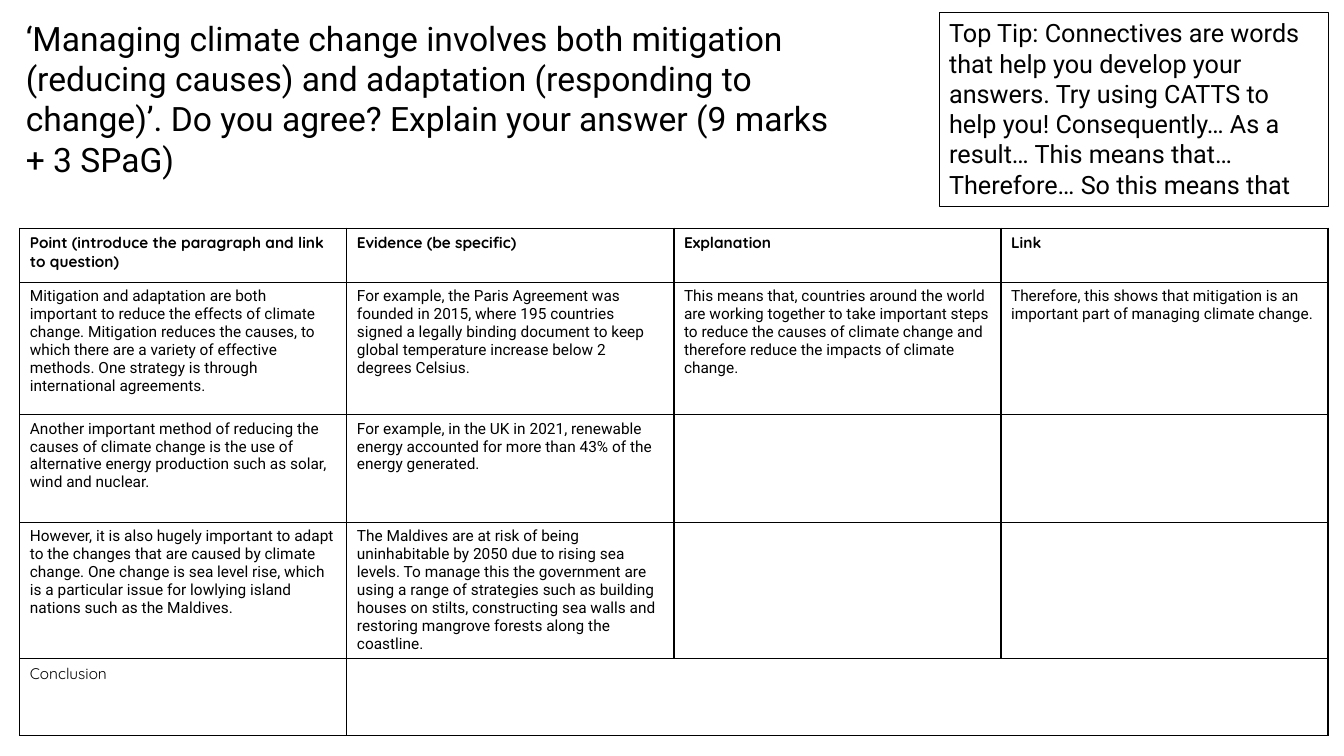
from lxml.etree import SubElement as Sub
from pptx import Presentation
from pptx.dml.color import RGBColor as RGB
from pptx.enum.shapes import MSO_SHAPE as Form
from pptx.enum.text import MSO_ANCHOR as Anchor, PP_ALIGN as Align
from pptx.oxml.ns import qn
from pptx.util import Cm, Pt

HUES = {"ink": "000000", "paper": "FFFFFF"}
HEAD, BODY = "Quicksand", "Roboto"
TITLE = ("‘Managing climate change involves both mitigation (reducing causes) and "
         "adaptation (responding to change)’. Do you agree? Explain your answer "
         "(9 marks + 3 SPaG)")
TIP = ("Top Tip: Connectives are words that help you develop your answers. Try using "
       "CATTS to help you! Consequently… As a result… This means that… Therefore… "
       "So this means that")
ROWS = [
    (1.37, ["Point (introduce the paragraph and link to question)",
            "Evidence (be specific)", "Explanation", "Link"]),
    (3.33, ["Mitigation and adaptation are both important to reduce the effects of "
            "climate change. Mitigation reduces the causes, to which there are a "
            "variety of effective methods. One strategy is through international "
            "agreements.",
            "For example, the Paris Agreement was founded in 2015, where 195 countries "
            "signed a legally binding document to keep global temperature increase "
            "below 2 degrees Celsius.",
            "This means that, countries around the world are working together to take "
            "important steps to reduce the causes of climate change and therefore "
            "reduce the impacts of climate change.",
            "Therefore, this shows that mitigation is an important part of managing "
            "climate change."]),
    (2.72, ["Another important method of reducing the causes of climate change is the "
            "use of alternative energy production such as solar, wind and nuclear.",
            "For example, in the UK in 2021, renewable energy accounted for more than "
            "43% of the energy generated.", "", ""]),
    (3.33, ["However, it is also hugely important to adapt to the changes that are "
            "caused by climate change. One change is sea level rise, which is a "
            "particular issue for lowlying island nations such as the Maldives.",
            "The Maldives are at risk of being uninhabitable by 2050 due to rising sea "
            "levels. To manage this the government are using a range of strategies "
            "such as building houses on stilts, constructing sea walls and restoring "
            "mangrove forests along the coastline.", "", ""]),
    (1.93, ["Conclusion", "", "", ""]),
]


def hue(name):
    return RGB.from_string(HUES[name])


def write(frame, text, size=11, font=BODY, bold=False):
    frame.word_wrap = True
    frame.vertical_anchor = Anchor.TOP
    para = frame.paragraphs[0]
    para.alignment = Align.LEFT
    if text:
        run = para.add_run()
        run.text = text
        face = run.font
        face.size, face.name, face.bold = Pt(size), font, bold
        face.color.rgb = hue("ink")


def edge(cell):
    props = cell._tc.get_or_add_tcPr()
    for spot, side in enumerate(("lnL", "lnR", "lnT", "lnB")):
        line = props.makeelement(qn(f"a:{side}"), {"w": str(Pt(1))})
        fill = Sub(line, qn("a:solidFill"))
        Sub(fill, qn("a:srgbClr"), val=HUES["ink"])
        props.insert(spot, line)


def title(slide, box):
    write(slide.shapes.add_textbox(*box).text_frame, TITLE, size=24)


def tip(slide, box):
    card = slide.shapes.add_shape(Form.RECTANGLE, *box)
    card.shadow.inherit = False
    card.fill.background()
    card.line.color.rgb = hue("ink")
    card.line.width = Pt(0.75)
    write(card.text_frame, TIP, size=18)


def plan(slide, box):
    left, top, wide, high = box
    count = len(ROWS[0][1])
    grid = slide.shapes.add_table(len(ROWS), count, left, top, wide, high).table
    for col in grid.columns:
        col.width = int(wide / count)
    last = len(ROWS) - 1
    for r, (tall, texts) in enumerate(ROWS):
        grid.rows[r].height = Cm(tall)
        for c, text in enumerate(texts):
            cell = grid.cell(r, c)
            cell.fill.solid()
            cell.fill.fore_color.rgb = hue("paper")
            edge(cell)
            write(cell.text_frame, text, bold=r == 0,
                  font=HEAD if r in (0, last) else BODY)
    grid.cell(last, 1).merge(grid.cell(last, count - 1))


def main():
    deck = Presentation()
    deck.slide_width, deck.slide_height = Cm(33.87), Cm(19.05)
    slide = deck.slides.add_slide(deck.slide_layouts[6])
    plan(slide, (Cm(0.5), Cm(5.75), Cm(32.97), Cm(12.68)))
    title(slide, (Cm(0.4), Cm(0.32), Cm(21.13), Cm(4.37)))
    tip(slide, (Cm(23.67), Cm(0.32), Cm(9.8), Cm(4.88)))
    deck.save("out.pptx")


if __name__ == "__main__":
    main()
